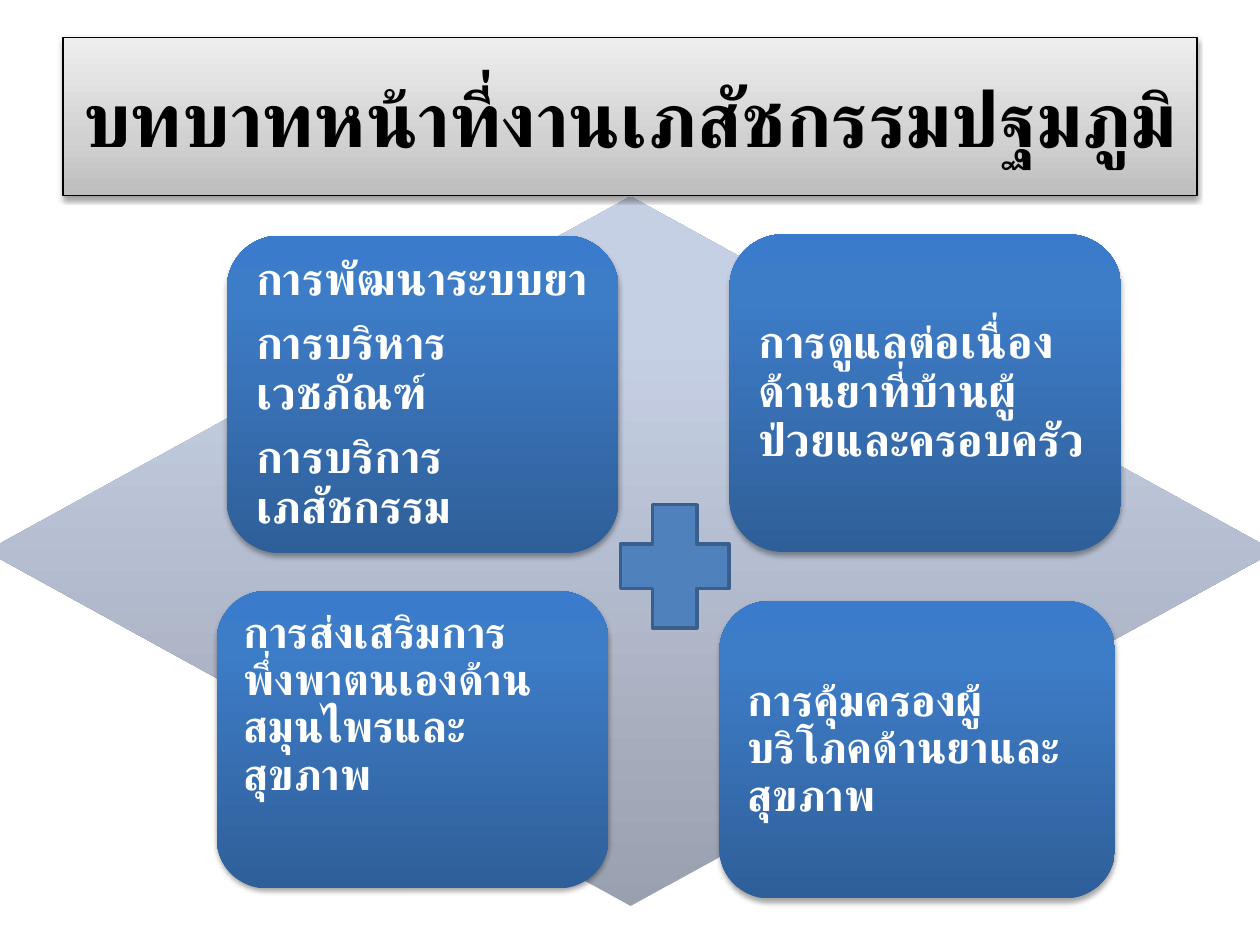
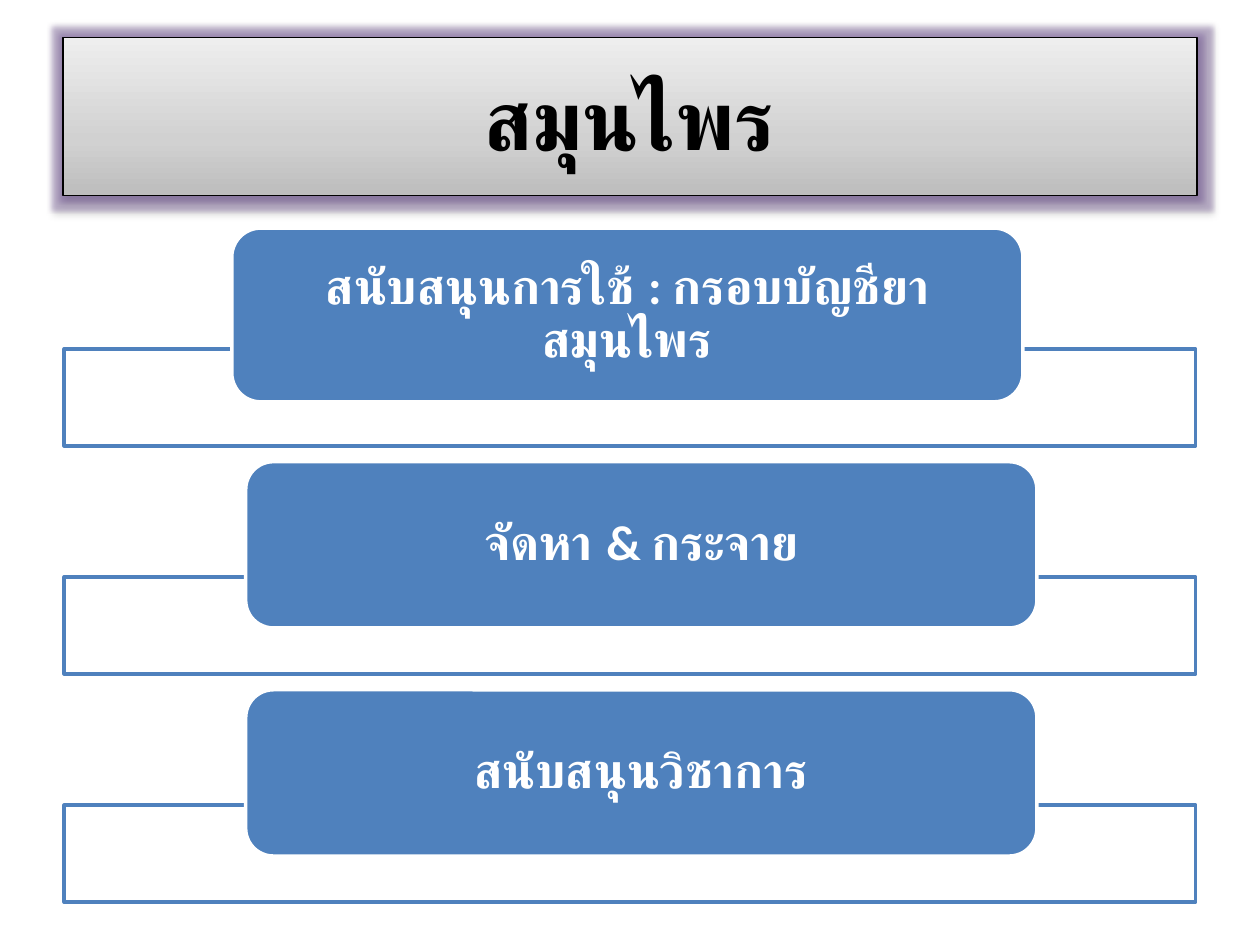
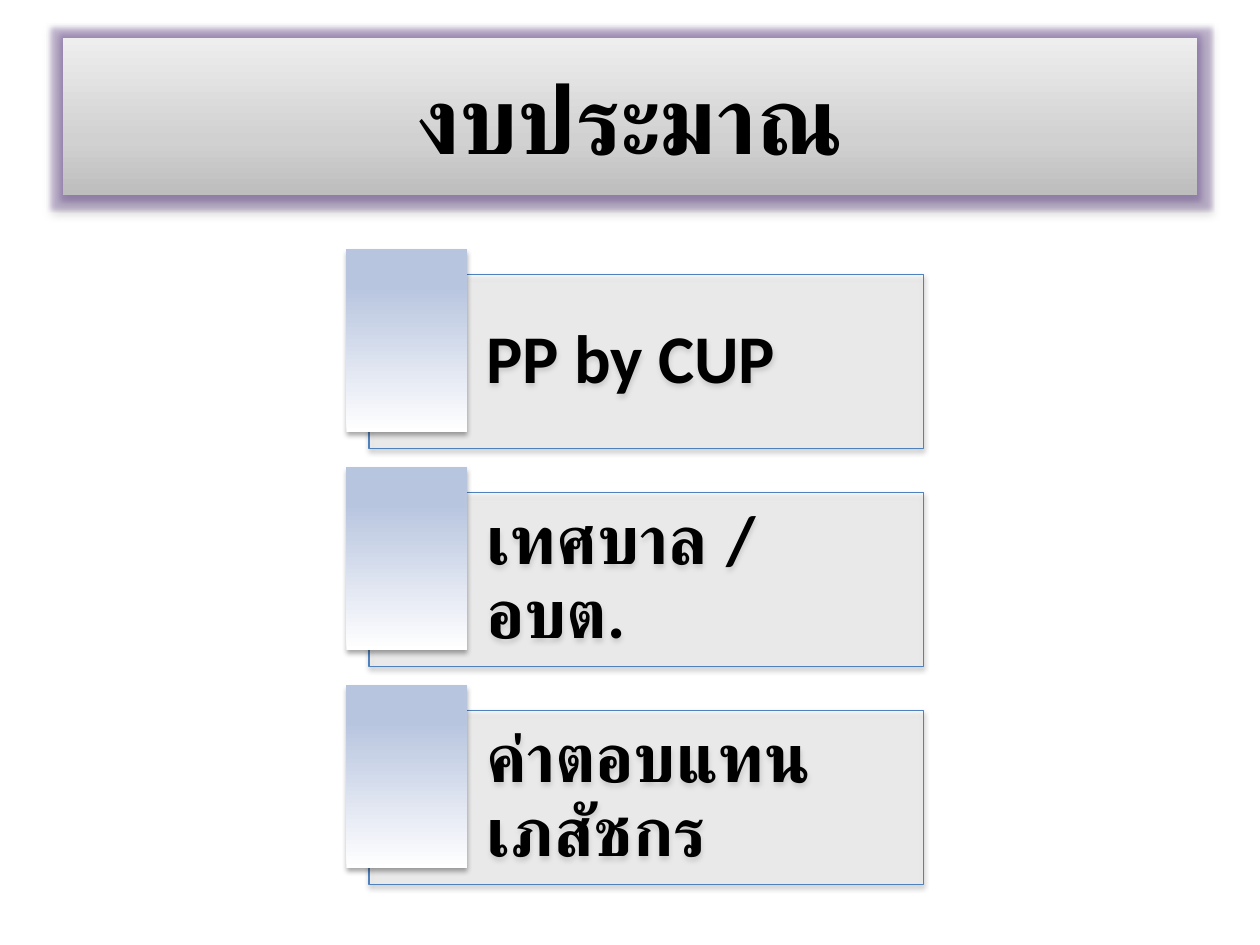
import collections
import dataclasses
import lxml.etree
import pptx
import pptx.dml.color
import pptx.enum.lang
import pptx.enum.shapes
import pptx.enum.text
import pptx.oxml.ns
import pptx.util

Box = collections.namedtuple("Box", "x y w h")
Shade = collections.namedtuple("Shade", "alpha blur dist")
KIND = pptx.enum.shapes.MSO_SHAPE
ALIGN = pptx.enum.text.PP_ALIGN
ANCHOR = pptx.enum.text.MSO_ANCHOR


@dataclasses.dataclass(frozen=True)
class Theme:
    font: str = "Calibri"
    black: str = "000000"
    white: str = "FFFFFF"
    blue: str = "4F81BD"
    navy: str = "3A5F8C"
    purple: str = "8064A2"
    silver: tuple = ((0, "BDBDBD"), (35, "D1D1D1"), (100, "EEEEEE"))
    slate: tuple = ((0, "99A0AF"), (80, "C6D0E4"), (100, "C7D1E5"))
    ocean: tuple = ((0, "2F5F99"), (80, "3D7CC7"), (100, "3A7CCB"))
    mist: tuple = ((0, "FFFFFF"), (80, "B8C5DF"), (100, "B8C6E0"))
    lift: Shade = Shade(35, 3.1, 1.8)
    edge: Shade = Shade(38, 3.1, 1.6)
    deep: Shade = Shade(32, 3.5, 2.2)
    glow: float = 5
    thin: float = 0.75
    thick: float = 2
    large: int = 26
    small: int = 25
    label: int = 28
    item: int = 39


THEME = Theme()
PAGE = Box(0, 0, 10, 7.5)


def part(box, x, y, w, h):
    return Box(box.x + box.w * x / 100, box.y + box.h * y / 100,
               box.w * w / 100, box.h * h / 100)


def rows(box, count, gap):
    high = (100 - gap * (count - 1)) / count
    return [part(box, 0, i * (high + gap), 100, high) for i in range(count)]


def rgb(color):
    return pptx.dml.color.RGBColor.from_string(color)


def node(parent, tag, **attrs):
    child = lxml.etree.SubElement(parent, pptx.oxml.ns.qn(tag))
    for key, value in attrs.items():
        child.set(key, str(value))
    return child


def tint(parent, color, alpha):
    node(node(parent, "a:srgbClr", val=color), "a:alpha", val=alpha * 1000)


def paint(shape, fill, alpha):
    if isinstance(fill, str):
        shape.fill.solid()
        shape.fill.fore_color.rgb = rgb(fill)
        if alpha < 100:
            color = shape._element.spPr.find(".//" + pptx.oxml.ns.qn("a:srgbClr"))
            node(color, "a:alpha", val=alpha * 1000)
        return
    shape.fill.gradient()
    shape.fill.gradient_angle = 90
    stops = shape._element.spPr.find(".//" + pptx.oxml.ns.qn("a:gsLst"))
    for stop in list(stops):
        stops.remove(stop)
    for pos, color in fill:
        node(node(stops, "a:gs", pos=pos * 1000), "a:srgbClr", val=color)


def effect(shape, shade, glow):
    shape.shadow.inherit = False
    group = shape._element.spPr.find(pptx.oxml.ns.qn("a:effectLst"))
    if glow:
        tint(node(group, "a:glow", rad=pptx.util.Pt(glow)), THEME.purple, 40)
    if shade:
        drop = node(group, "a:outerShdw", blurRad=pptx.util.Pt(shade.blur),
                    dist=pptx.util.Pt(shade.dist), dir=5400000, rotWithShape=0)
        tint(drop, THEME.black, shade.alpha)


def draw(slide, kind, box, fill, alpha=100, line=None, width=THEME.thin,
         shade=None, glow=0):
    shape = slide.shapes.add_shape(kind, *(pptx.util.Inches(v) for v in box))
    paint(shape, fill, alpha)
    if line:
        shape.line.color.rgb = rgb(line)
        shape.line.width = pptx.util.Pt(width)
    else:
        shape.line.fill.background()
    effect(shape, shade, glow)
    return shape


def write(shape, text, size, color, align=ALIGN.LEFT, anchor=ANCHOR.MIDDLE,
          inset=(0.1, 0.05, 0.1, 0.05), tight=True):
    frame = shape.text_frame
    frame.word_wrap = True
    frame.vertical_anchor = anchor
    frame.margin_left, frame.margin_top, frame.margin_right, frame.margin_bottom = (
        pptx.util.Inches(v) for v in inset)
    frame.text = text
    for para in frame.paragraphs:
        para.alignment = align
        if tight:
            para.line_spacing = 0.9
            para.space_after = pptx.util.Pt(round(size * 0.35))
        for run in para.runs:
            font = run.font
            font.name = THEME.font
            font.size = pptx.util.Pt(size)
            font.bold = True
            font.color.rgb = rgb(color)
            font.language_id = pptx.enum.lang.MSO_LANGUAGE_ID.THAI


def title(slide, text, size, line=THEME.black, shade=THEME.edge, glow=0):
    band = draw(slide, KIND.RECTANGLE, part(PAGE, 5, 4, 90, 16.67), THEME.silver,
                line=line, shade=shade, glow=glow)
    write(band, text, size, THEME.black, ALIGN.CENTER, tight=False)


def roles(slide, box):
    draw(slide, KIND.DIAMOND, box, THEME.slate)
    even = (0.11,) * 4
    raised = (0.1, 0.04, 0.1, 0.1)
    cards = (
        ((18.67, 5.51, 30.4, 44.76), THEME.large, ANCHOR.MIDDLE, even,
         "การพัฒนาระบบยา\nการบริหารเวชภัณฑ์\nการบริการเภสัชกรรม"),
        ((57.67, 5.33, 30.4, 44.76), THEME.large, ANCHOR.MIDDLE, even,
         "การดูแลต่อเนื่องด้านยาที่บ้านผู้ป่วยและครอบครัว"),
        ((17.89, 55.6, 30.4, 41.92), THEME.small, ANCHOR.TOP, raised,
         "การส่งเสริมการพึ่งพาตนเองด้านสมุนไพรและสุขภาพ"),
        ((56.89, 57.02, 30.69, 41.92), THEME.small, ANCHOR.MIDDLE, even,
         "การคุ้มครองผู้บริโภคด้านยาและสุขภาพ"),
    )
    for area, size, anchor, inset, text in cards:
        card = draw(slide, KIND.ROUNDED_RECTANGLE, part(box, *area), THEME.ocean,
                    shade=THEME.lift)
        write(card, text, size, THEME.white, anchor=anchor, inset=inset)
    plus = draw(slide, KIND.MATH_PLUS, part(box, 47.7, 40.32, 11.44, 23.62),
                THEME.blue, line=THEME.navy, width=THEME.thick)
    plus.adjustments[0] = 0.3


def herbs(slide, box):
    first = (14.81, 0, 69.93, 79.77)
    other = (16.04, 2.6, 69.93, 76.3)
    cards = (
        (first, "สนับสนุนการใช้ : กรอบบัญชียาสมุนไพร"),
        (other, "จัดหา & กระจาย"),
        (other, "สนับสนุนวิชาการ"),
    )
    for row, (area, text) in zip(rows(box, len(cards), 1.5), cards):
        draw(slide, KIND.RECTANGLE, part(row, 0, 55.49, 100, 44.51), THEME.white,
             alpha=90, line=THEME.blue, width=THEME.thick)
        card = draw(slide, KIND.ROUNDED_RECTANGLE, part(row, *area), THEME.blue,
                    line=THEME.white, width=THEME.thick)
        write(card, text, THEME.label, THEME.white, ALIGN.CENTER,
              inset=(0.24, 0, 0.24, 0))


def funds(slide, box):
    names = ("PP by CUP", "เทศบาล / อบต.", "ค่าตอบแทนเภสัชกร")
    for row, name in zip(rows(box, len(names), 2.98), names):
        panel = draw(slide, KIND.RECTANGLE, part(row, 3.93, 12.66, 96.07, 87.34),
                     THEME.white, alpha=40, line=THEME.blue, shade=THEME.lift)
        write(panel, name, THEME.item, THEME.black, inset=(0.93, 0.16, 0.16, 0.16))
        draw(slide, KIND.RECTANGLE, part(row, 0, 0, 20.96, 91.77), THEME.mist,
             shade=THEME.lift)


def main():
    deck = pptx.Presentation()
    deck.slide_width = pptx.util.Inches(PAGE.w)
    deck.slide_height = pptx.util.Inches(PAGE.h)
    blank = deck.slide_layouts[6]

    slide = deck.slides.add_slide(blank)
    roles(slide, part(PAGE, -1.1, 20.8, 102.3, 75.07))
    title(slide, "บทบาทหน้าที่งานเภสัชกรรมปฐมภูมิ", 44)

    slide = deck.slides.add_slide(blank)
    title(slide, "สมุนไพร", 48, glow=THEME.glow)
    herbs(slide, part(PAGE, 5.1, 24.13, 89.8, 71.33))

    slide = deck.slides.add_slide(blank)
    title(slide, "งบประมาณ", 54, line=None, shade=THEME.deep, glow=THEME.glow)
    funds(slide, part(PAGE, 27.5, 26.4, 45.8, 67.2))

    deck.save("out.pptx")


if __name__ == "__main__":
    main()
